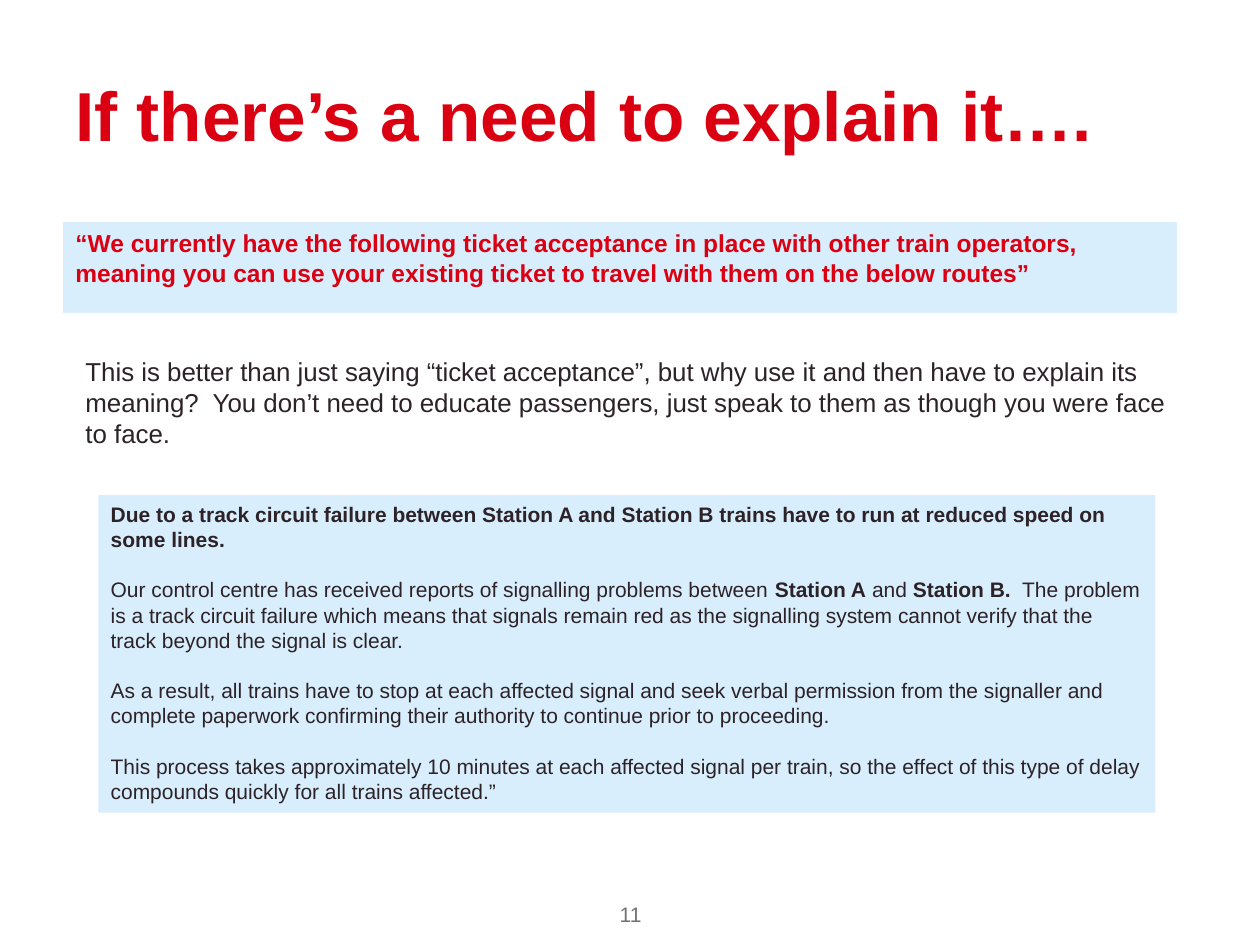
from pptx import Presentation
from pptx.dml.color import RGBColor
from pptx.enum.shapes import MSO_SHAPE
from pptx.enum.text import MSO_ANCHOR, PP_ALIGN
from pptx.oxml.ns import qn
from pptx.util import Inches, Pt
from lxml.etree import SubElement

WIDE, HIGH = 10, 7.5
HUES = {"red": "DA0011", "ink": "2C2227", "gray": "747474", "sky": "81CAF6"}


class Deck:
    font = "Arial"
    tint = 30

    def __init__(self):
        self.file = Presentation()
        self.file.slide_width = Inches(WIDE)
        self.file.slide_height = Inches(HIGH)
        self.page = self.file.slides.add_slide(self.file.slide_layouts[6])

    def place(self, x, y, w, h):
        return [Inches(v * side) for v, side in zip((x, y, w, h), (WIDE, HIGH) * 2)]

    def letter(self, shape, paras, size, hue, gap=0, align=PP_ALIGN.LEFT, anchor=MSO_ANCHOR.TOP):
        frame = shape.text_frame
        frame.word_wrap = True
        frame.vertical_anchor = anchor
        for i, runs in enumerate(paras):
            para = frame.add_paragraph() if i else frame.paragraphs[0]
            para.alignment = align
            if i:
                para.space_before = Pt(gap)
            for words, bold in runs:
                run = para.add_run()
                run.text = words
                run.font.name = self.font
                run.font.size = Pt(size)
                run.font.bold = bold
                run.font.color.rgb = RGBColor.from_string(HUES[hue])

    def text(self, area, paras, size, hue, **style):
        box = self.page.shapes.add_textbox(*self.place(*area))
        self.letter(box, paras, size, hue, **style)

    def panel(self, area, paras, size, hue, **style):
        box = self.page.shapes.add_shape(MSO_SHAPE.RECTANGLE, *self.place(*area))
        box.shadow.inherit = False
        box.line.fill.background()
        box.fill.solid()
        box.fill.fore_color.rgb = RGBColor.from_string(HUES["sky"])
        tone = box.element.spPr.find(qn("a:solidFill"))[0]
        SubElement(tone, qn("a:alpha")).set("val", str(self.tint * 1000))
        self.letter(box, paras, size, hue, **style)


QUOTE = "“We currently have the following ticket acceptance in place with other train operators, meaning you can use your existing ticket to travel with them on the below routes”"
NOTE = "This is better than just saying “ticket acceptance”, but why use it and then have to explain its meaning?  You don’t need to educate passengers, just speak to them as though you were face to face."
STORY = [
    [("Due to a track circuit failure between Station A and Station B trains have to run at reduced speed on some lines.", True)],
    [
        ("Our control centre has received reports of signalling problems between ", False),
        ("Station A", True),
        (" and ", False),
        ("Station B.", True),
        ("  The problem is a track circuit failure which means that signals remain red as the signalling system cannot verify that the track beyond the signal is clear.", False),
    ],
    [("As a result, all trains have to stop at each affected signal and seek verbal permission from the signaller and complete paperwork confirming their authority to continue prior to proceeding.", False)],
    [("This process takes approximately 10 minutes at each affected signal per train, so the effect of this type of delay compounds quickly for all trains affected.”", False)],
]


def main():
    deck = Deck()
    deck.text((0.05, 0.07, 0.9, 0.1), [[("If there’s a need to explain it….", True)]],
              39.6, "red", anchor=MSO_ANCHOR.MIDDLE)
    deck.panel((0.05, 0.235, 0.884, 0.096), [[(QUOTE, True)]], 14, "red")
    deck.text((0.058, 0.37, 0.884, 0.1), [[(NOTE, False)]], 14.8, "ink")
    deck.panel((0.078, 0.524, 0.839, 0.336), STORY, 12, "ink", gap=14.4)
    deck.text((0.342, 0.947, 0.317, 0.045), [[("11", False)]],
              12, "gray", align=PP_ALIGN.CENTER)
    deck.file.save("out.pptx")


if __name__ == "__main__":
    main()
